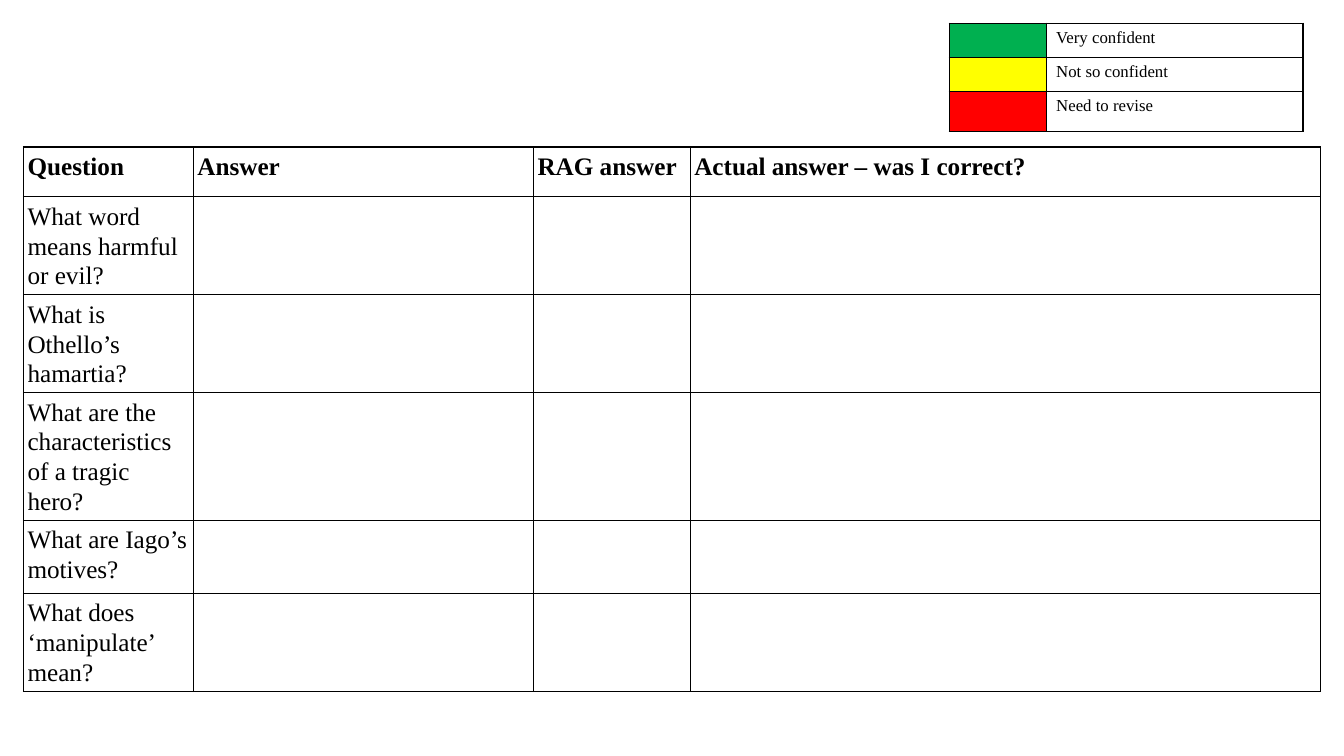
"""Build a quiz sheet on Othello with a confidence key."""
from lxml import etree
from pptx import Presentation
from pptx.dml.color import RGBColor
from pptx.oxml import ns
from pptx.util import Pt

COLOURS = {"ink": "000000", "green": "00B050", "yellow": "FFFF00", "red": "FF0000"}
FONT = "Times New Roman"


def add_grid(left, top, widths, heights):
    """Add an unfilled table with thin black cell borders."""
    grid = slide.shapes.add_table(
        len(heights), len(widths), Pt(left), Pt(top), Pt(sum(widths)), Pt(sum(heights))
    ).table
    grid.first_row = grid.horz_banding = False
    for column, width in zip(grid.columns, widths):
        column.width = Pt(width)
    for row, height in zip(grid.rows, heights):
        row.height = Pt(height)
    for cell in grid.iter_cells():
        properties = cell._tc.get_or_add_tcPr()
        for side in ("a:lnL", "a:lnR", "a:lnT", "a:lnB"):
            border = etree.SubElement(properties, ns.qn(side), w=str(Pt(1)))
            paint = etree.SubElement(border, ns.qn("a:solidFill"))
            etree.SubElement(paint, ns.qn("a:srgbClr"), val=COLOURS["ink"])
        cell.fill.background()
    return grid


def write(cell, wording, size, bold=False):
    """Put one run of black text in a cell."""
    run = cell.text_frame.paragraphs[0].add_run()
    run.text = wording
    run.font.name = FONT
    run.font.size = Pt(size)
    run.font.bold = bold
    run.font.color.rgb = RGBColor.from_string(COLOURS["ink"])


deck = Presentation()
deck.slide_width, deck.slide_height = Pt(960), Pt(540)
slide = deck.slides.add_slide(deck.slide_layouts[6])

headings = ["Question", "Answer", "RAG answer", "Actual answer – was I correct?"]
questions = [
    "What word means harmful or evil?",
    "What is Othello’s hamartia?",
    "What are the characteristics of a tragic hero?",
    "What are Iago’s motives?",
    "What does ‘manipulate’ mean?",
]
quiz = add_grid(16.7, 105, [121.3, 243, 112, 450], [35.5, 69.7, 69.7, 91, 52.2, 69.7])
for cell in quiz.iter_cells():
    cell.margin_left = cell.margin_right = Pt(3)
    cell.margin_top = cell.margin_bottom = Pt(3)
    cell.text_frame.paragraphs[0].line_spacing = 1.07
for column, heading in enumerate(headings):
    write(quiz.cell(0, column), heading, 18, bold=True)
for row, question in enumerate(questions, start=1):
    write(quiz.cell(row, 0), question, 18)

ratings = [
    ("green", "Very confident"),
    ("yellow", "Not so confident"),
    ("red", "Need to revise"),
]
key = add_grid(678, 16.5, [69.3, 183.5], [24.3, 24.3, 29])
for row, (colour, meaning) in enumerate(ratings):
    swatch = key.cell(row, 0)
    swatch.fill.solid()
    swatch.fill.fore_color.rgb = RGBColor.from_string(COLOURS[colour])
    etree.SubElement(swatch.text_frame.paragraphs[0]._p, ns.qn("a:endParaRPr"), sz="1200")
    write(key.cell(row, 1), meaning, 12)

deck.save("out.pptx")
